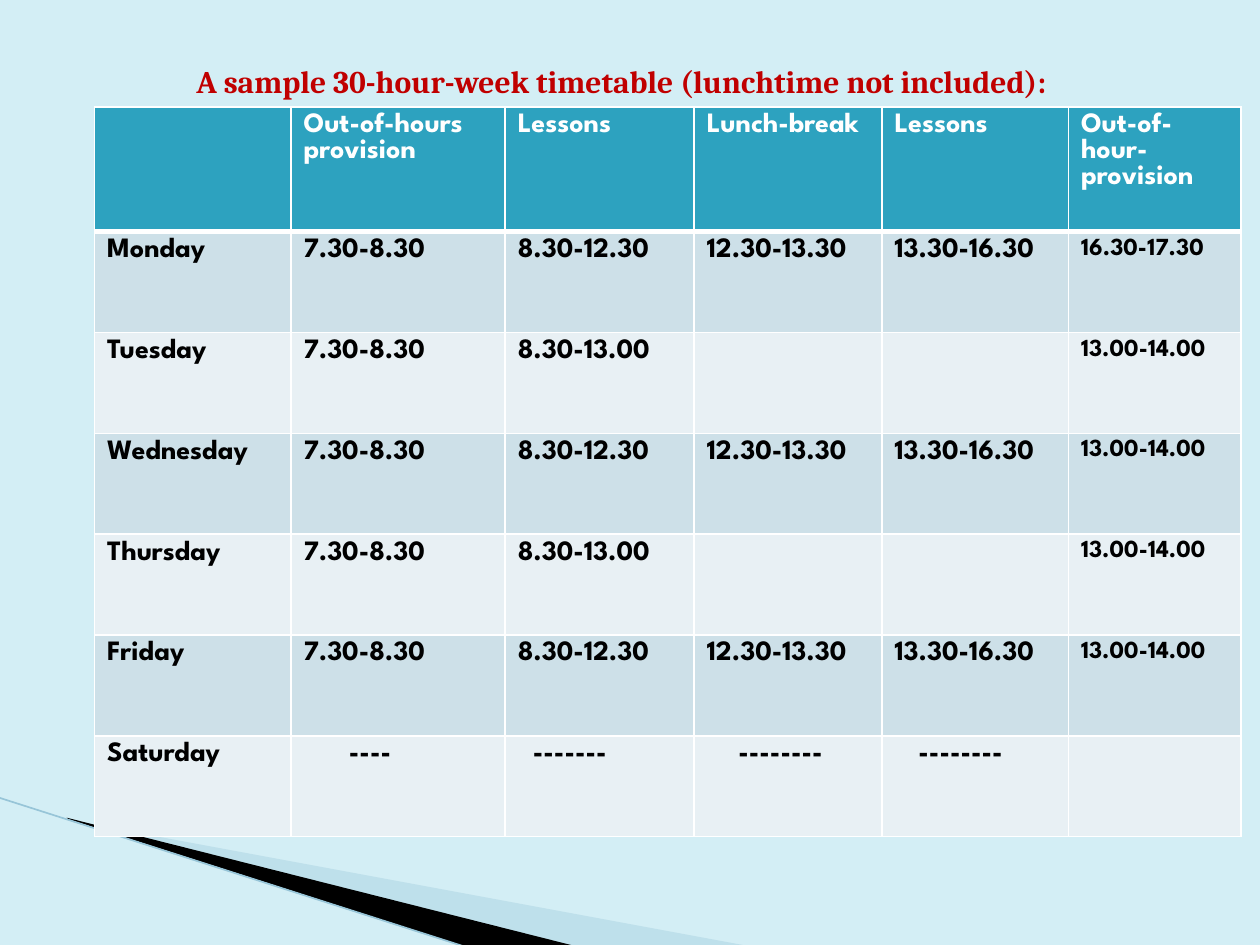
"""Build a slide with a sample 30-hour-week school timetable."""
from lxml.etree import SubElement
from pptx import Presentation
from pptx.dml.color import RGBColor
from pptx.enum.shapes import MSO_CONNECTOR
from pptx.enum.text import MSO_AUTO_SIZE
from pptx.oxml.ns import qn
from pptx.util import Inches, Pt

BACKGROUND = RGBColor(0xD3, 0xEE, 0xF5)
PALE_BLUE = RGBColor(0xA0, 0xCB, 0xDC)
LINE_BLUE = RGBColor(0x97, 0xC5, 0xD8)
HEADER = RGBColor(0x2D, 0xA2, 0xBF)
BANDS = RGBColor(0xCD, 0xE0, 0xE8), RGBColor(0xE8, 0xF0, 0xF4)
WHITE = RGBColor(0xFF, 0xFF, 0xFF)
BLACK = RGBColor(0, 0, 0)
RED = RGBColor(0xC0, 0, 0)

COLUMN_WIDTHS = 1.56, 1.7, 1.5, 1.49, 1.48, 1.37
HEADER_HEIGHT, DAY_HEIGHT = 0.99, 0.8
LONG_DAY = "7.30-8.30", "8.30-12.30", "12.30-13.30", "13.30-16.30"
SHORT_DAY = "7.30-8.30", "8.30-13.00", "", ""
TIMETABLE = (
    ("", "Out-of-hours provision", "Lessons", "Lunch-break", "Lessons", "Out-of-hour-provision"),
    ("Monday", *LONG_DAY, "16.30-17.30"),
    ("Tuesday", *SHORT_DAY, "13.00-14.00"),
    ("Wednesday", *LONG_DAY, "13.00-14.00"),
    ("Thursday", *SHORT_DAY, "13.00-14.00"),
    ("Friday", *LONG_DAY, "13.00-14.00"),
    ("Saturday", "----", "-------", "--------", "--------", ""),
)
DASH_INDENTS = 0, 0.36, 0.12, 0.25, 0.19, 0


def add_run(paragraph, text, font_name, size, color):
    run = paragraph.add_run()
    run.text = text
    run.font.name = font_name
    run.font.size = Pt(size)
    run.font.bold = True
    run.font.color.rgb = color


def add_wedge(slide, points, color, opacity=100):
    start, *rest = [(Inches(x), Inches(y)) for x, y in points]
    builder = slide.shapes.build_freeform(*start, scale=1.0)
    builder.add_line_segments(rest, close=True)
    wedge = builder.convert_to_shape()
    wedge.shadow.inherit = False
    wedge.fill.solid()
    wedge.fill.fore_color.rgb = color
    wedge.line.fill.background()
    if opacity < 100:
        srgb = wedge.fill._xPr.find(".//" + qn("a:srgbClr"))
        SubElement(srgb, qn("a:alpha"), val=str(opacity * 1000))


def add_edge_line(slide, start, end):
    edge = slide.shapes.add_connector(
        MSO_CONNECTOR.STRAIGHT, *map(Inches, start), *map(Inches, end))
    edge.line.color.rgb = LINE_BLUE
    edge.line.width = Pt(0.95)
    SubElement(edge._element.spPr, qn("a:effectLst"))


def set_borders(cell, top, bottom):
    properties = cell._tc.get_or_add_tcPr()
    widths = {"a:lnL": 1, "a:lnR": 1, "a:lnT": top, "a:lnB": bottom}
    for position, (tag, width) in enumerate(widths.items()):
        border = properties.makeelement(qn(tag), {"w": str(Pt(width))})
        fill = SubElement(border, qn("a:solidFill"))
        SubElement(fill, qn("a:srgbClr"), val=str(WHITE))
        properties.insert(position, border)


def fill_cell(cell, text, row, column):
    is_header = row == 0
    cell.fill.solid()
    cell.fill.fore_color.rgb = HEADER if is_header else BANDS[(row - 1) % 2]
    set_borders(cell, 3 if row == 1 else 1, 3 if is_header else 1)
    if text.startswith("-"):
        cell.margin_left = Inches(0.1 + DASH_INDENTS[column])
    if text:
        size = 14 if column == 5 and not is_header else 16
        add_run(cell.text_frame.paragraphs[0], text, "League Spartan", size,
                WHITE if is_header else BLACK)


def add_timetable(slide):
    heights = [HEADER_HEIGHT] + [DAY_HEIGHT] * (len(TIMETABLE) - 1)
    timetable = slide.shapes.add_table(
        len(TIMETABLE), len(COLUMN_WIDTHS), Inches(0.75), Inches(0.85),
        Inches(sum(COLUMN_WIDTHS)), Inches(sum(heights))).table
    for column, width in zip(timetable.columns, COLUMN_WIDTHS):
        column.width = Inches(width)
    for row, height in zip(timetable.rows, heights):
        row.height = Inches(height)
    for r, entries in enumerate(TIMETABLE):
        for c, text in enumerate(entries):
            fill_cell(timetable.cell(r, c), text, r, c)


def add_title(slide, text):
    title = slide.shapes.add_textbox(Inches(1.46), Inches(0.44), Inches(8.03), Inches(0.4))
    frame = title.text_frame
    frame.word_wrap = True
    frame.auto_size = MSO_AUTO_SIZE.SHAPE_TO_FIT_TEXT
    add_run(frame.paragraphs[0], text, "Cambria", 18, RED)


def main():
    presentation = Presentation()
    presentation.slide_width, presentation.slide_height = Inches(10), Inches(7.5)
    slide = presentation.slides.add_slide(presentation.slide_layouts[6])
    slide.background.fill.solid()
    slide.background.fill.fore_color.rgb = BACKGROUND
    add_wedge(slide, [(0.55, 6.51), (5.95, 7.51), (4.56, 7.51), (0.55, 6.5)], PALE_BLUE, 40)
    add_wedge(slide, [(0.53, 6.49), (4.57, 7.51), (3.72, 7.52), (0.54, 6.5)], BLACK)
    add_edge_line(slide, (-0.01, 6.33), (3.71, 7.52))
    add_timetable(slide)
    add_title(slide, "A sample 30-hour-week timetable (lunchtime not included):")
    presentation.save("out.pptx")


if __name__ == "__main__":
    main()
